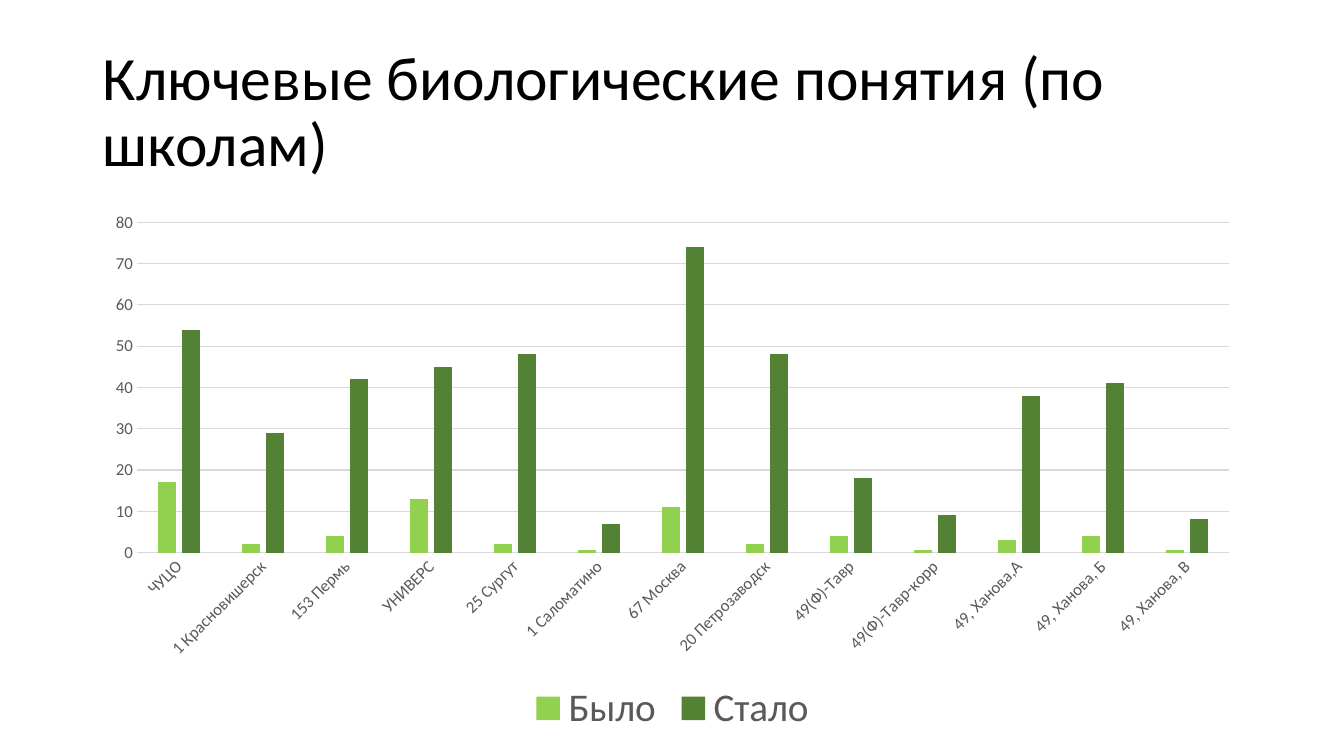
"""Build a slide comparing key biology concepts by school before and after."""
from dataclasses import dataclass

from pptx import Presentation
from pptx.chart.chart import Chart
from pptx.chart.data import CategoryChartData
from pptx.dml.color import RGBColor
from pptx.enum.chart import XL_CHART_TYPE as ChartType
from pptx.enum.chart import XL_LEGEND_POSITION as LegendPosition
from pptx.enum.chart import XL_TICK_MARK as TickMark
from pptx.enum.text import MSO_ANCHOR as Anchor
from pptx.enum.text import MSO_AUTO_SIZE as AutoSize
from pptx.enum.text import PP_ALIGN as Align
from pptx.slide import Slide
from pptx.text.text import Font
from pptx.util import Inches, Pt

BLACK = RGBColor(0x00, 0x00, 0x00)
GRAY = RGBColor(0x59, 0x59, 0x59)
LIGHT_GRAY = RGBColor(0xD9, 0xD9, 0xD9)
LIGHT_GREEN = RGBColor(0x92, 0xD0, 0x50)
DARK_GREEN = RGBColor(0x54, 0x82, 0x35)

FONT_NAME = "Calibri"
LEFT, WIDTH = Inches(0.92), Inches(11.5)
TITLE_ONLY_LAYOUT = 5
LABEL_ROTATION = "-2700000"


@dataclass(frozen=True)
class SchoolSeries:
    name: str
    values: tuple[float, ...]
    color: RGBColor


SCHOOLS = (
    "ЧУЦО", "1 Красновишерск", "153 Пермь", "УНИВЕРС", "25 Сургут",
    "1 Саломатино", "67 Москва", "20 Петрозаводск", "49(Ф)-Тавр",
    "49(Ф)-Тавр-корр", "49, Ханова,А", "49, Ханова, Б", "49, Ханова, В",
)
SERIES = (
    SchoolSeries("Было", (17, 2, 4, 13, 2, 0.5, 11, 2, 4, 0.5, 3, 4, 0.5), LIGHT_GREEN),
    SchoolSeries("Стало", (54, 29, 42, 45, 48, 7, 74, 48, 18, 9, 38, 41, 8), DARK_GREEN),
)


def set_font(font: Font, size: float, color: RGBColor) -> None:
    font.name = FONT_NAME
    font.size = Pt(size)
    font.color.rgb = color


def set_title(slide: Slide, text: str) -> None:
    title = slide.shapes.title
    title.left, title.top = LEFT, Inches(0.4)
    title.width, title.height = WIDTH, Inches(1.45)
    frame = title.text_frame
    frame.text = text
    frame.word_wrap = True
    frame.auto_size = AutoSize.NONE
    frame.vertical_anchor = Anchor.MIDDLE
    paragraph = frame.paragraphs[0]
    paragraph.alignment = Align.LEFT
    paragraph.line_spacing = 0.9
    set_font(paragraph.font, 44, BLACK)


def add_school_chart(slide: Slide) -> Chart:
    data = CategoryChartData()
    data.categories = SCHOOLS
    for series in SERIES:
        data.add_series(series.name, series.values)
    chart = slide.shapes.add_chart(
        ChartType.COLUMN_CLUSTERED, LEFT, Inches(2), WIDTH, Inches(5.34), data
    ).chart
    chart.has_title = False
    set_font(chart.font, 10, BLACK)
    plot = chart.plots[0]
    plot.gap_width, plot.overlap = 219, -27
    plot.vary_by_categories = False
    for drawn, series in zip(plot.series, SERIES):
        drawn.format.fill.solid()
        drawn.format.fill.fore_color.rgb = series.color
        drawn.invert_if_negative = False
    return chart


def format_axes(chart: Chart) -> None:
    schools, scores = chart.category_axis, chart.value_axis
    for axis in (schools, scores):
        axis.major_tick_mark = axis.minor_tick_mark = TickMark.NONE
        set_font(axis.tick_labels.font, 12, GRAY)
    schools._element.txPr.bodyPr.set("rot", LABEL_ROTATION)
    scores.minimum_scale, scores.maximum_scale, scores.major_unit = 0, 80, 10
    scores.has_major_gridlines = True
    scores.format.line.fill.background()
    for line in (schools.format.line, scores.major_gridlines.format.line):
        line.color.rgb = LIGHT_GRAY
        line.width = Pt(0.75)


def format_legend(chart: Chart) -> None:
    chart.has_legend = True
    chart.legend.position = LegendPosition.BOTTOM
    chart.legend.include_in_layout = False
    set_font(chart.legend.font, 28, GRAY)


def main() -> None:
    presentation = Presentation()
    presentation.slide_width, presentation.slide_height = Inches(13.33), Inches(7.5)
    slide = presentation.slides.add_slide(presentation.slide_layouts[TITLE_ONLY_LAYOUT])
    set_title(slide, "Ключевые биологические понятия (по школам)")
    chart = add_school_chart(slide)
    format_axes(chart)
    format_legend(chart)
    presentation.save("out.pptx")


if __name__ == "__main__":
    main()
